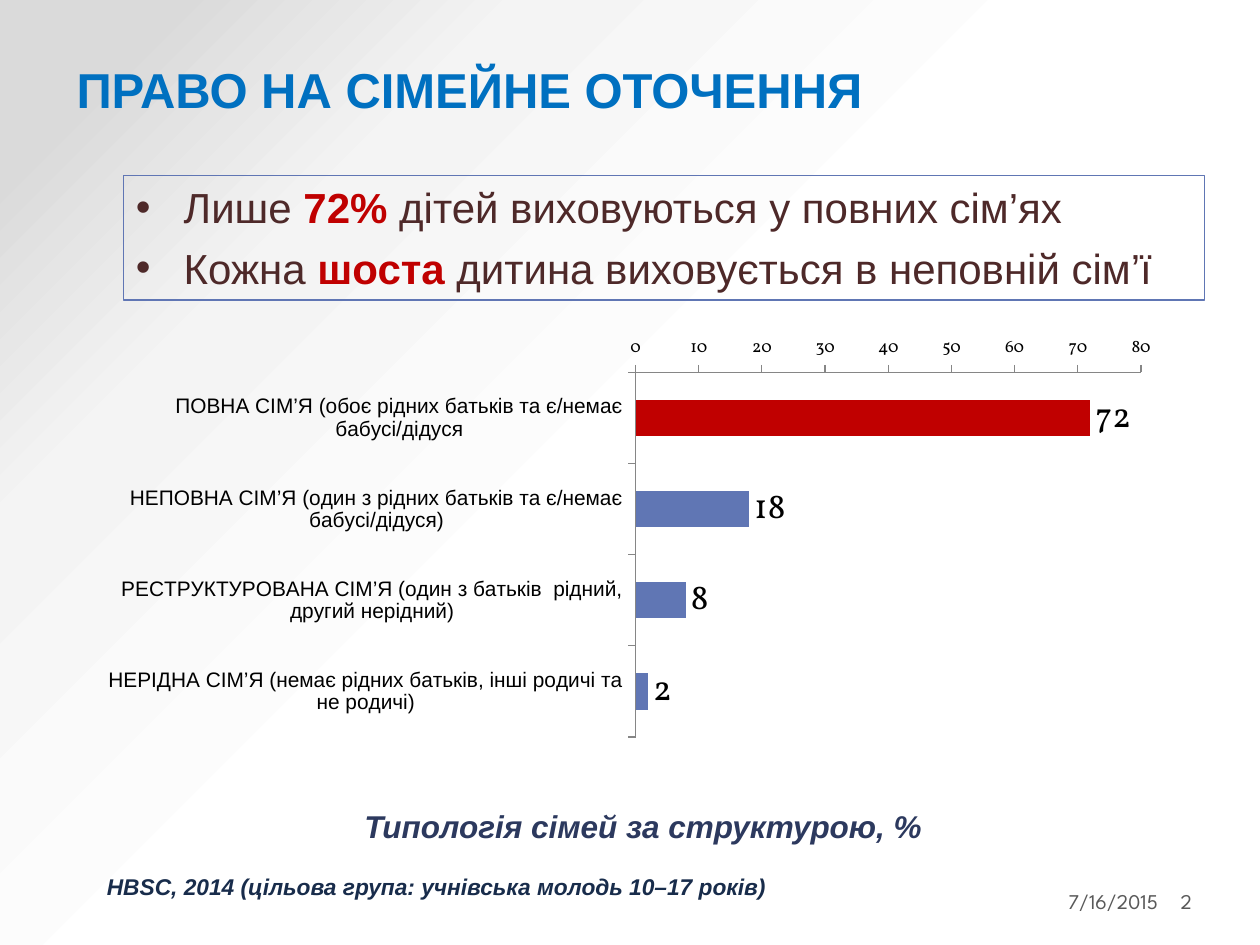
import pptx
import pptx.chart.data
import pptx.dml.color
import pptx.enum.chart
import pptx.enum.shapes
import pptx.enum.text
import pptx.oxml
import pptx.oxml.ns
import pptx.util
from pptx.util import Inches, Pt

BLUE, RED, BROWN, GREY = "6076B4", "C00000", "4E2929", "595959"
FONT, DATE_FONT, CHART_FONT = "Arial", "League Spartan", "Vollkorn"
STOPS = [(50, "FFFFFF"), (76, "F4F4F4"), (92, "DADADA")]
FACTS = [
    ("Лише ", "72%", " дітей виховуються у повних сім’ях"),
    ("Кожна ", "шоста", " дитина виховується в неповній сім’ї"),
]
FAMILIES = [
    ("ПОВНА СІМ’Я (обоє рідних батьків та є/немає бабусі/дідуся", 72),
    ("НЕПОВНА СІМ’Я (один з рідних батьків та є/немає бабусі/дідуся)", 18),
    ("РЕСТРУКТУРОВАНА СІМ’Я (один з батьків  рідний, другий нерідний)", 8),
    ("НЕРІДНА СІМ’Я (немає рідних батьків, інші родичі та не родичі)", 2),
]
PLOT = {"x": 0.489, "y": 0.09, "w": 0.475, "h": 0.854}
ALIGN = pptx.enum.text.PP_ALIGN
ANCHOR = pptx.enum.text.MSO_ANCHOR
TEXTS = [
    ("ПРАВО НА СІМЕЙНЕ ОТОЧЕННЯ", (0.51, 0.36, 9, 0.63), (0.1, 0.1),
     ALIGN.LEFT, ANCHOR.BOTTOM, (28, "0070C0", True, False, FONT)),
    ("HBSC, 2014 (цільова група: учнівська молодь 10–17 років)", (0.75, 6.88, 6.46, 0.32), (0.1, 0.1),
     ALIGN.LEFT, ANCHOR.TOP, (13, "182C4B", True, True, FONT)),
    ("Типологія сімей за структурою, %", (0.98, 6.36, 8.25, 0.4), (0.1, 0.1),
     ALIGN.CENTER, ANCHOR.TOP, (18, "2C395E", True, True, FONT)),
    ("7/16/2015", (6.96, 6.95, 2.28, 0.4), (0.1, 0.05),
     ALIGN.RIGHT, ANCHOR.MIDDLE, (12, GREY, False, False, DATE_FONT)),
    ("2", (9.34, 6.95, 0.61, 0.4), (0.03, 0.05),
     ALIGN.LEFT, ANCHOR.MIDDLE, (12, GREY, False, False, DATE_FONT)),
]


def rgb(value):
    return pptx.dml.color.RGBColor.from_string(value)


def style(font, size, color, bold=False, italic=False, name=FONT):
    font.size, font.bold, font.italic, font.name = Pt(size), bold, italic, name
    font.color.rgb = rgb(color)


def box(at):
    return [Inches(v) for v in at]


def add_background(s):
    s.background.fill.gradient()
    grad = next(s.element.iter(pptx.oxml.ns.qn("a:gradFill")))
    stops = "".join(
        f'<a:gs pos="{pos * 1000}"><a:srgbClr val="{color}"/></a:gs>' for pos, color in STOPS)
    grad.getparent().replace(grad, pptx.oxml.parse_xml(
        f'<a:gradFill {pptx.oxml.ns.nsdecls("a")} rotWithShape="1"><a:gsLst>{stops}</a:gsLst>'
        '<a:path path="circle"><a:fillToRect l="100000" t="100000"/></a:path></a:gradFill>'))


def add_text(s, text, at, insets, align, anchor, font):
    tf = s.shapes.add_textbox(*box(at)).text_frame
    tf.word_wrap = True
    tf.margin_left, tf.margin_right = box(insets)
    tf.vertical_anchor = anchor
    p = tf.paragraphs[0]
    p.text = text
    p.alignment = align
    style(p.runs[0].font, *font)


def add_chart(s):
    data = pptx.chart.data.CategoryChartData()
    data.categories = [name for name, _ in FAMILIES]
    data.add_series("Series 1", [value for _, value in FAMILIES])
    ec = pptx.enum.chart
    chart = s.shapes.add_chart(
        ec.XL_CHART_TYPE.BAR_CLUSTERED, *box((0.86, 2.65, 8.5, 3.39)), data).chart
    chart.has_legend = chart.has_title = False
    style(chart.font, 10, "000000", name=CHART_FONT)

    cat, val = chart.category_axis, chart.value_axis
    for axis in (cat, val):
        axis.has_major_gridlines = False
        axis.major_tick_mark = ec.XL_TICK_MARK.OUTSIDE
        axis.format.line.color.rgb = rgb("868686")
        axis.format.line.width = Pt(0.75)
    cat.reverse_order = True
    style(cat.tick_labels.font, 12, "000000")
    val.minimum_scale, val.maximum_scale, val.major_unit = 0, 80, 10

    plot = chart.plots[0]
    plot.gap_width = 150
    plot.vary_by_categories = False
    series = plot.series[0]
    series.invert_if_negative = False
    for part, color in ((series, BLUE), (series.points[0], RED)):
        part.format.fill.solid()
        part.format.fill.fore_color.rgb = rgb(color)
    labels = series.data_labels
    labels.show_value = True
    labels.position = ec.XL_LABEL_POSITION.OUTSIDE_END
    style(labels.font, 20, "000000", name=CHART_FONT)

    area = next(chart.element.iter(pptx.oxml.ns.qn("c:plotArea")))
    for old in area.findall(pptx.oxml.ns.qn("c:layout")):
        area.remove(old)
    sizes = "".join(f'<c:{key} val="{value}"/>' for key, value in PLOT.items())
    area.insert(0, pptx.oxml.parse_xml(
        f'<c:layout {pptx.oxml.ns.nsdecls("c")}><c:manualLayout><c:layoutTarget val="inner"/>'
        f'<c:xMode val="edge"/><c:yMode val="edge"/>{sizes}</c:manualLayout></c:layout>'))


def add_facts(s):
    sp = s.shapes.add_shape(
        pptx.enum.shapes.MSO_SHAPE.RECTANGLE, *box((0.98, 1.39, 8.58, 0.99)))
    sp.shadow.inherit = False
    sp.fill.background()
    sp.line.color.rgb = rgb(BLUE)
    sp.line.width = Pt(0.75)
    tf = sp.text_frame
    tf.word_wrap = True
    tf.vertical_anchor = ANCHOR.TOP
    for i, parts in enumerate(FACTS):
        p = tf.paragraphs[0] if i == 0 else tf.add_paragraph()
        p.alignment = ALIGN.LEFT
        p.space_before = Pt(6)
        pPr = p._p.get_or_add_pPr()
        pPr.set("marL", str(Inches(0.38)))
        pPr.set("indent", str(-Inches(0.38)))
        for tag in ('buFont typeface="Arial"', 'buChar char="•"'):
            pPr.append(pptx.oxml.parse_xml(f'<a:{tag} {pptx.oxml.ns.nsdecls("a")}/>'))
        for j, text in enumerate(parts):
            r = p.add_run()
            r.text = text
            style(r.font, 24, RED if j == 1 else BROWN, bold=j == 1)


def main():
    prs = pptx.Presentation()
    prs.slide_width, prs.slide_height = Inches(10), Inches(7.5)
    s = prs.slides.add_slide(prs.slide_layouts[6])
    add_background(s)
    add_chart(s)
    add_facts(s)
    for item in TEXTS:
        add_text(s, *item)
    prs.save("out.pptx")


if __name__ == "__main__":
    main()
